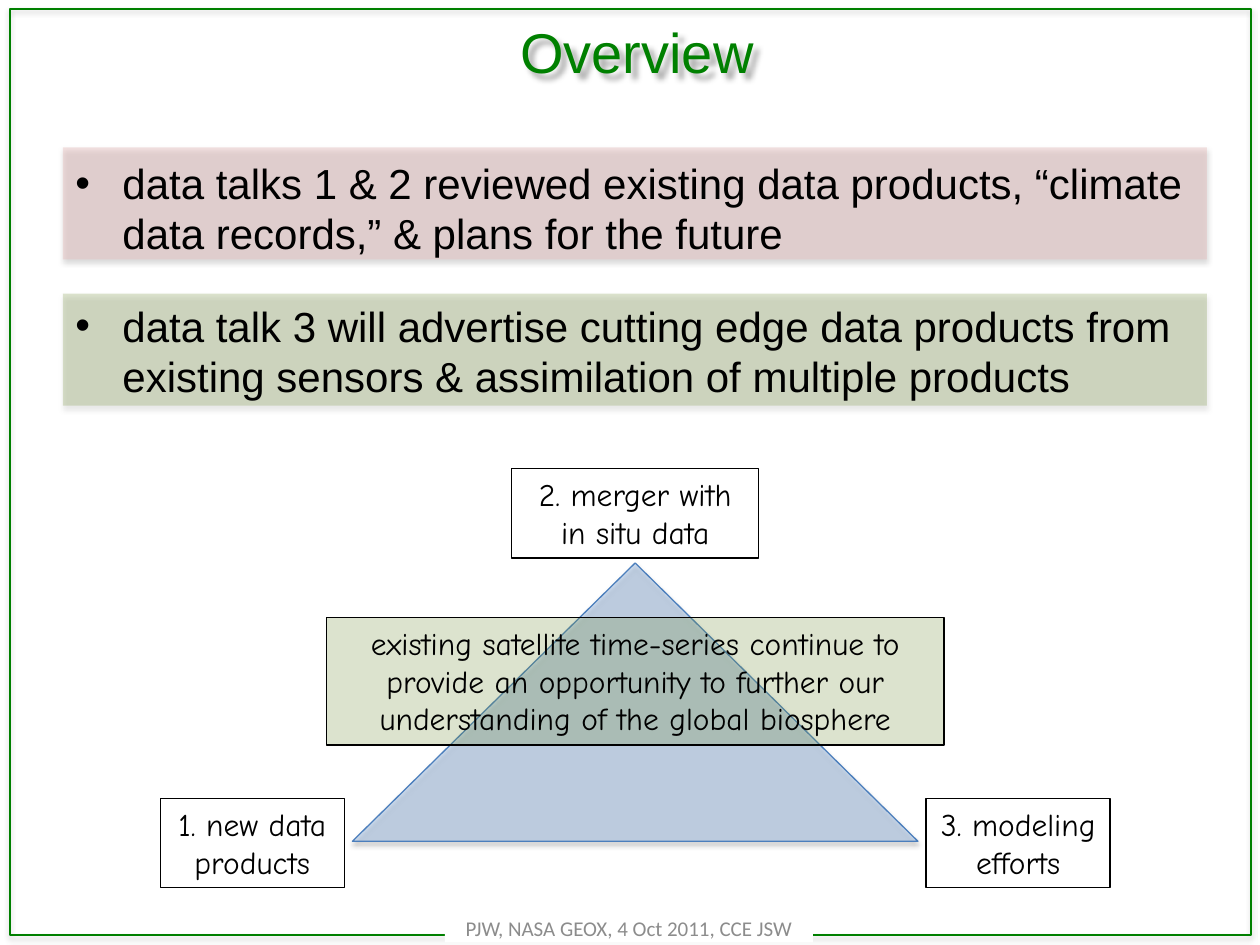
from lxml import etree
from pptx import Presentation
from pptx.dml.color import RGBColor
from pptx.enum.shapes import MSO_SHAPE
from pptx.enum.text import MSO_ANCHOR, PP_ALIGN
from pptx.oxml.ns import qn
from pptx.util import Cm, Pt

RECT = MSO_SHAPE.RECTANGLE
TRIANGLE = MSO_SHAPE.ISOSCELES_TRIANGLE
CENTER, LEFT = PP_ALIGN.CENTER, PP_ALIGN.LEFT
TOP, MIDDLE = MSO_ANCHOR.TOP, MSO_ANCHOR.MIDDLE

BLACK = RGBColor(0x00, 0x00, 0x00)
WHITE = RGBColor(0xFF, 0xFF, 0xFF)
GREEN = RGBColor(0x00, 0x80, 0x00)
GRAY = RGBColor(0x8C, 0x8C, 0x8C)
PINK = RGBColor(0xE6, 0xB9, 0xB8)
OLIVE = RGBColor(0x77, 0x93, 0x3C)
SKY = RGBColor(0x8E, 0xB4, 0xE3)
BLUE = RGBColor(0x4B, 0x7E, 0xBC)


def add_child(parent, tag, **attrs):
    node = etree.SubElement(parent, qn(tag))
    for name, value in attrs.items():
        node.set(name, str(value))
    return node


def add_shadow(shape, blur=3.1, dist=1.8, angle=90):
    effects = shape._element.spPr.find(qn("a:effectLst"))
    shadow = add_child(effects, "a:outerShdw", blurRad=Pt(blur), dist=Pt(dist),
                       dir=angle * 60000, algn="ctr", rotWithShape=0)
    color = add_child(shadow, "a:srgbClr", val=BLACK)
    add_child(color, "a:alpha", val=35000)


def add_box(slide, box, fill=None, alpha=100, line=None, kind=RECT):
    shape = slide.shapes.add_shape(kind, *map(Cm, box))
    shape.shadow.inherit = False
    if fill is None:
        shape.fill.background()
    else:
        shape.fill.solid()
        shape.fill.fore_color.rgb = fill
        if alpha < 100:
            color = shape._element.spPr.find(qn("a:solidFill"))[0]
            add_child(color, "a:alpha", val=alpha * 1000)
    if line is None:
        shape.line.fill.background()
    else:
        shape.line.color.rgb = line
        shape.line.width = Pt(0.75)
    return shape


def add_run(para, text, font, size, color, align=CENTER):
    para.alignment = align
    run = para.add_run()
    run.text = text
    run.font.name = font
    run.font.size = Pt(size)
    run.font.color.rgb = color


def set_text(shape, text, font, size, color, anchor=TOP):
    frame = shape.text_frame
    frame.word_wrap = True
    frame.vertical_anchor = anchor
    add_run(frame.paragraphs[0], text, font, size, color)


def add_title(slide, box):
    title = slide.shapes.add_textbox(*map(Cm, box))
    set_text(title, "Overview", "Arial", 32, GREEN, MIDDLE)
    title.shadow.inherit = False
    add_shadow(title, 3, 4, 45)


def add_points(slide, box):
    left, top, width, height = box
    band = 2.26
    for y, fill, alpha in ((top, PINK, 40), (top + height - band, OLIVE, 25)):
        add_shadow(add_box(slide, (left, y, width, band), fill, alpha))
    body = slide.shapes.add_textbox(Cm(left), Cm(top + 0.08), Cm(width), Cm(height))
    frame = body.text_frame
    frame.word_wrap = True
    points = (
        "data talks 1 & 2 reviewed existing data products, “climate data records,” & plans for the future",
        "data talk 3 will advertise cutting edge data products from existing sensors & assimilation of multiple products",
    )
    for i, text in enumerate(points):
        para = frame.add_paragraph() if i else frame.paragraphs[0]
        props = para._p.get_or_add_pPr()
        props.set("marL", str(Cm(0.95)))
        props.set("indent", str(Cm(-0.95)))
        add_child(props, "a:buFont", typeface="Arial")
        add_child(props, "a:buChar", char="•")
        if i:
            para.space_before = Pt(24)
        add_run(para, text, "Arial", 24, BLACK, LEFT)


def add_diagram(slide, box):
    left, top, width, height = box
    mid = left + width / 2
    side, tall, cap = 3.71, 1.8, 4.98
    base, claim = 11.4, 12.45
    low = top + height - tall
    peak = add_box(slide, (mid - base / 2, top + 1.9, base, 5.61), SKY, 40, BLUE, TRIANGLE)
    add_shadow(peak)
    labels = (
        ((mid - claim / 2, top + 3, claim, 2.57), OLIVE, 25,
         "existing satellite time-series continue to provide an opportunity "
         "to further our understanding of the global biosphere"),
        ((left, low, side, tall), WHITE, 100, "1. new data products"),
        ((mid - cap / 2, top, cap, tall), WHITE, 100, "2. merger with in situ data"),
        ((left + width - side, low, side, tall), WHITE, 100, "3. modeling efforts"),
    )
    for place, fill, alpha, text in labels:
        label = add_box(slide, place, fill, alpha, BLACK)
        set_text(label, text, "Comic Neue", 18, BLACK)


def add_footer(slide, box):
    footer = add_box(slide, box, WHITE)
    set_text(footer, "PJW, NASA GEOX, 4 Oct 2011, CCE JSW", "Calibri", 12, GRAY, MIDDLE)


def main():
    deck = Presentation()
    deck.slide_width, deck.slide_height = Cm(25.4), Cm(19.05)
    slide = deck.slides.add_slide(deck.slide_layouts[6])
    add_shadow(add_box(slide, (0.2, 0.18, 25.02, 18.67), line=GREEN))
    add_title(slide, (0.79, 0.33, 24.1, 1.42))
    add_points(slide, (1.27, 2.97, 23.06, 5.21))
    add_footer(slide, (8.97, 18.42, 7.42, 0.58))
    add_diagram(slide, (3.23, 9.45, 19.15, 8.45))
    deck.save("out.pptx")


if __name__ == "__main__":
    main()
